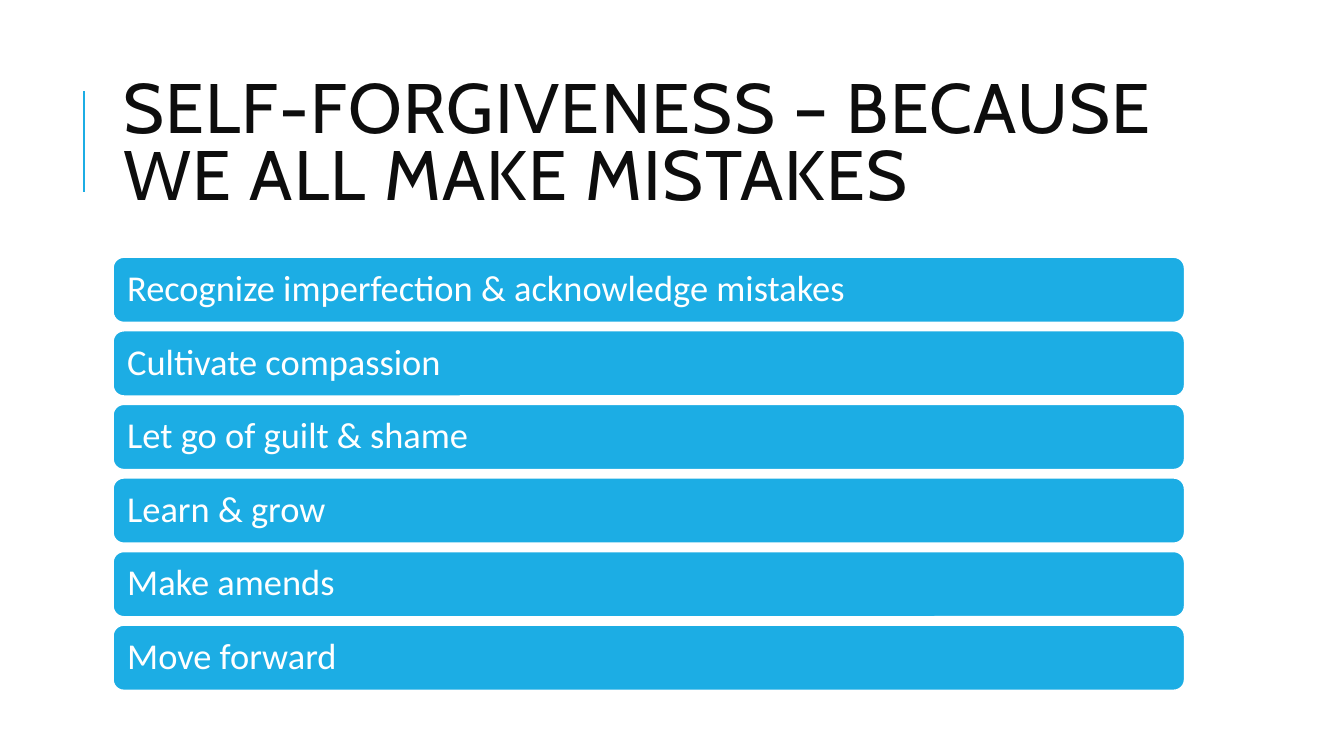
from dataclasses import dataclass
from typing import Any

from lxml import etree
from pptx import Presentation
from pptx import util as u
from pptx.dml.color import RGBColor
from pptx.enum import shapes, text
from pptx.oxml.ns import qn

EMU_PER_PX = 9144
LEFT, WIDTH = 112, 1063
STEP_TOP, STEP_HEIGHT, STEP_PITCH = 255, 65, 73
BLUE, WHITE, INK = "1CADE4", "FFFFFF", "0D0D0D"

HEADING = "SELF-FORGIVENESS – BECAUSE WE ALL MAKE MISTAKES"
STEPS = (
    "Recognize imperfection & acknowledge mistakes",
    "Cultivate compassion",
    "Let go of guilt & shame",
    "Learn & grow",
    "Make amends",
    "Move forward",
)


@dataclass(frozen=True)
class Step:
    label: str
    top: int


@dataclass(frozen=True)
class TextStyle:
    font: str
    size: int
    color: str
    line_spacing: float
    inset_x: int
    inset_y: int


HEADING_STYLE = TextStyle("Cabin", 50, INK, 0.8, 10, 5)
STEP_STYLE = TextStyle("Calibri", 26, WHITE, 0.9, 11, 5)


def px(length: int) -> u.Emu:
    return u.Emu(length * EMU_PER_PX)


def rgb(color: str) -> RGBColor:
    return RGBColor.from_string(color)


def apply(target: Any, values: dict[str, Any]) -> None:
    for attribute, value in values.items():
        setattr(target, attribute, value)


def write(shape: Any, wording: str, style: TextStyle) -> None:
    frame = shape.text_frame
    frame.text = wording
    apply(frame, {
        "word_wrap": True,
        "auto_size": text.MSO_AUTO_SIZE.NONE,
        "vertical_anchor": text.MSO_ANCHOR.MIDDLE,
        "margin_left": px(style.inset_x),
        "margin_right": px(style.inset_x),
        "margin_top": px(style.inset_y),
        "margin_bottom": px(style.inset_y),
    })
    paragraph = frame.paragraphs[0]
    apply(paragraph, {
        "alignment": text.PP_ALIGN.LEFT,
        "line_spacing": style.line_spacing,
    })
    font = paragraph.runs[0].font
    apply(font, {"name": style.font, "size": u.Pt(style.size)})
    font.color.rgb = rgb(style.color)


def draw_heading(slide: Any) -> None:
    heading = slide.shapes.title
    apply(heading, {
        "left": px(LEFT), "top": px(64),
        "width": px(WIDTH), "height": px(164),
    })
    write(heading, HEADING, HEADING_STYLE)
    run = heading.text_frame.paragraphs[0].runs[0]
    run.font._element.set("spc", "100")


def draw_accent(slide: Any) -> None:
    accent = slide.shapes.add_connector(
        shapes.MSO_CONNECTOR.STRAIGHT, px(83), px(190), px(83), px(90))
    accent.line.color.rgb = rgb(BLUE)
    accent.line.width = u.Pt(1.5)
    etree.SubElement(accent._element.spPr, qn("a:effectLst"))


def draw_step(slide: Any, step: Step) -> None:
    bar = slide.shapes.add_shape(
        shapes.MSO_SHAPE.ROUNDED_RECTANGLE,
        px(LEFT), px(step.top), px(WIDTH), px(STEP_HEIGHT))
    bar.shadow.inherit = False
    bar.fill.solid()
    bar.fill.fore_color.rgb = rgb(BLUE)
    bar.line.color.rgb = rgb(WHITE)
    bar.line.width = u.Pt(1.25)
    write(bar, step.label, STEP_STYLE)


def main() -> None:
    deck = Presentation()
    apply(deck, {"slide_width": px(1333), "slide_height": px(750)})
    slide = deck.slides.add_slide(deck.slide_layouts.get_by_name("Title Only"))
    draw_accent(slide)
    draw_heading(slide)
    for index, label in enumerate(STEPS):
        draw_step(slide, Step(label, STEP_TOP + index * STEP_PITCH))
    deck.save("out.pptx")


if __name__ == "__main__":
    main()
